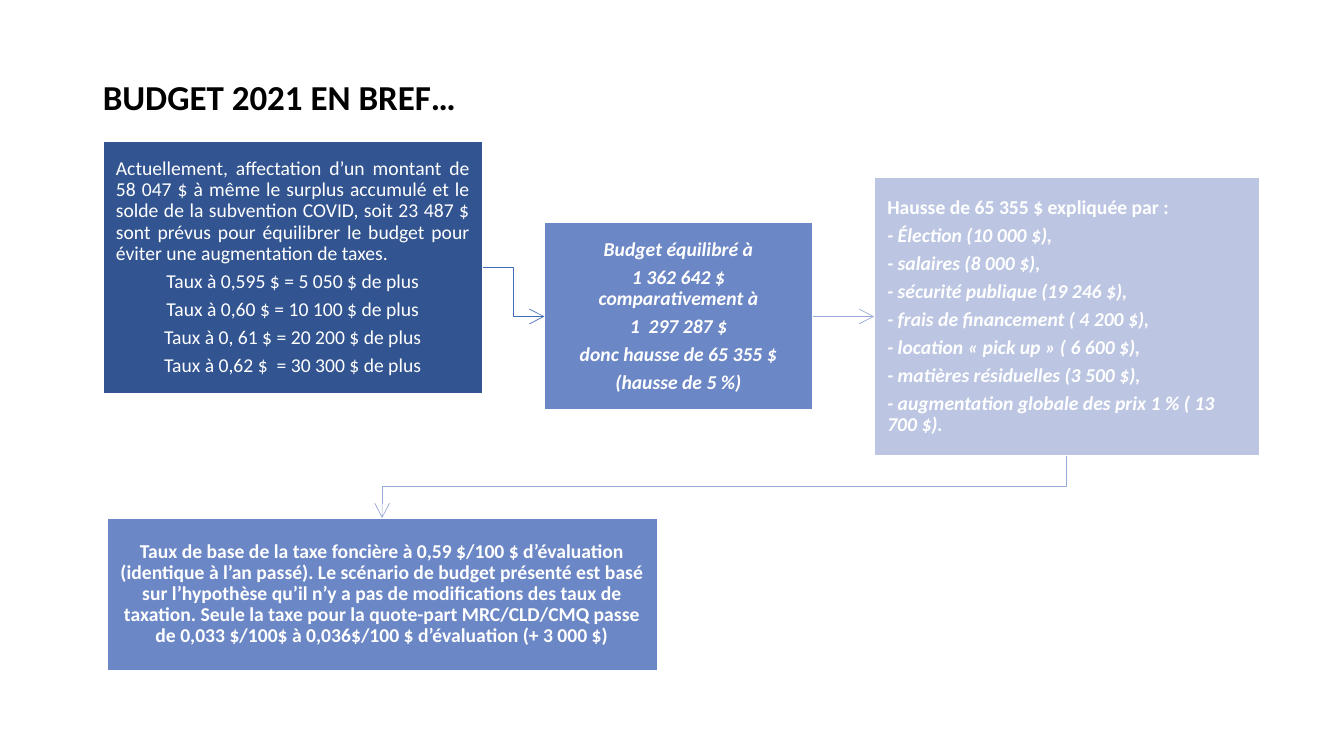
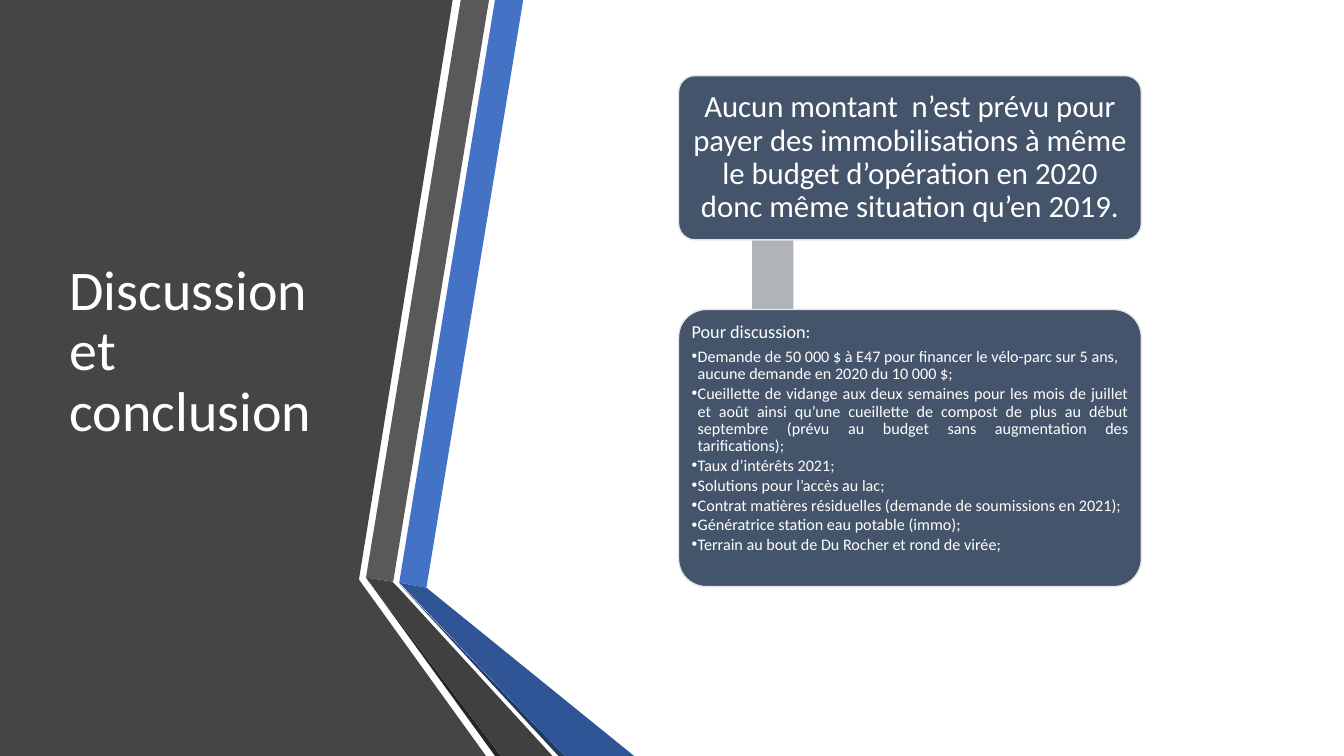
from dataclasses import dataclass

from lxml.etree import SubElement
from pptx import Presentation
from pptx.dml.color import RGBColor
from pptx.enum.shapes import MSO_CONNECTOR as Link, MSO_SHAPE as Preset
from pptx.enum.text import MSO_ANCHOR as Anchor, MSO_AUTO_SIZE as AutoSize, PP_ALIGN as Align
from pptx.oxml.ns import qn
from pptx.util import Inches, Pt

FONT = "Calibri"
COLORS = {
    "black": "000000", "white": "FFFFFF",
    "navy": "325491", "blue": "6C87C5", "pale": "BCC6E2",
    "first_arrow": "416DBB", "arrow": "97A9D5",
    "panel": "454545", "accent": "4472C4", "accent_dark": "2F5597", "accent_shade": "203864",
    "gray": "595959", "gray_dark": "404040", "gray_shade": "262626",
    "card": "44546A", "card_line": "E7E6E6", "bar": "B0B4B9",
}
BANDS = [
    ("panel", [(0, 0), (4.49, 0), (3.56, 5.75), (4.82, 7.5), (0, 7.5)]),
    ("accent", [(3.96, 5.78), (4.23, 5.83), (5.19, 0), (4.91, 0)]),
    ("gray", [(4.85, 0), (4.57, 0), (3.63, 5.73), (3.9, 5.77)]),
    ("gray_shade", [(3.63, 5.73), (4.91, 7.5), (4.97, 7.5)]),
    ("accent_shade", [(3.96, 5.79), (5.54, 7.5), (5.6, 7.5)]),
    ("accent_dark", [(3.96, 5.78), (5.6, 7.5), (6.29, 7.5), (4.23, 5.83)]),
    ("gray_dark", [(5.48, 7.5), (3.95, 5.83), (3.89, 5.77), (3.63, 5.73), (4.97, 7.5)]),
]
SURPLUS = [
    "Actuellement, affectation d’un montant de 58 047 $ à même le surplus accumulé et le solde "
    "de la subvention COVID, soit 23 487 $ sont prévus pour équilibrer le budget pour éviter "
    "une augmentation de taxes.",
    "Taux à 0,595 $ = 5 050 $ de plus",
    "Taux à 0,60 $ = 10 100 $ de plus",
    "Taux à 0, 61 $ = 20 200 $ de plus",
    "Taux à 0,62 $  = 30 300 $ de plus",
]
BALANCE = [
    "Budget équilibré à",
    "1 362 642 $ comparativement à",
    "1  297 287 $",
    "donc hausse de 65 355 $",
    "(hausse de 5 %)",
]
INCREASE = [
    "Hausse de 65 355 $ expliquée par :",
    "- Élection (10 000 $),",
    "- salaires (8 000 $),",
    "- sécurité publique (19 246 $),",
    "- frais de financement ( 4 200 $),",
    "- location « pick up » ( 6 600 $),",
    "- matières résiduelles (3 500 $),",
    "- augmentation globale des prix 1 % ( 13 700 $).",
]
TAX_RATE = [
    "Taux de base de la taxe foncière à 0,59 $/100 $ d’évaluation (identique à l’an passé). "
    "Le scénario de budget présenté est basé sur l’hypothèse qu’il n’y a pas de modifications "
    "des taux de taxation. Seule la taxe pour la quote-part MRC/CLD/CMQ passe de 0,033 $/100$ "
    "à 0,036$/100 $ d’évaluation (+ 3 000 $)",
]
CAPITAL = [
    "Aucun montant  n’est prévu pour payer des immobilisations à même le budget d’opération "
    "en 2020 donc même situation qu’en 2019.",
]
TOPICS = [
    "Pour discussion:",
    "Demande de 50 000 $ à E47 pour financer le vélo-parc sur 5 ans, aucune demande en 2020 "
    "du 10 000 $;",
    "Cueillette de vidange aux deux semaines pour les mois de juillet et août ainsi qu’une "
    "cueillette de compost de plus au début septembre (prévu au budget sans augmentation des "
    "tarifications);",
    "Taux d’intérêts 2021;",
    "Solutions pour l’accès au lac;",
    "Contrat matières résiduelles (demande de soumissions en 2021);",
    "Génératrice station eau potable (immo);",
    "Terrain au bout de Du Rocher et rond de virée;",
]


@dataclass
class Box:
    """A rectangle in inches."""
    left: float
    top: float
    width: float
    height: float

    def inner(self, left, top, width, height):
        """Return a box placed relative to this one."""
        return Box(self.left + left, self.top + top, width, height)

    def lengths(self):
        """Return the four measures as lengths."""
        return [Inches(value) for value in (self.left, self.top, self.width, self.height)]


def color(name):
    """Return the named colour."""
    return RGBColor.from_string(COLORS[name])


def set_values(target, values):
    """Set each attribute in values on the target."""
    for name, value in values.items():
        setattr(target, name, value)


def paint(shape, fill, line=None):
    """Give a shape a flat fill and an optional one-point line."""
    shape.shadow.inherit = False
    shape.fill.solid()
    shape.fill.fore_color.rgb = color(fill)
    if line:
        shape.line.color.rgb = color(line)
        shape.line.width = Pt(1)
    else:
        shape.line.fill.background()


def style_paragraph(paragraph, size, align=Align.CENTER, after=0.35, shade="white", **font):
    """Format a paragraph and its runs, with spacing as a share of the size."""
    set_values(paragraph, {"alignment": align, "line_spacing": 0.9,
                           "space_before": Pt(0), "space_after": Pt(round(size * after, 1))})
    for run in paragraph.runs:
        set_values(run.font, {"name": FONT, "size": Pt(size), **font})
        run.font.color.rgb = color(shade)


def write(shape, lines, size, margins, anchor=Anchor.MIDDLE, **style):
    """Fill a shape with paragraphs and return them."""
    frame = shape.text_frame
    side, edge = (Inches(margin) for margin in margins)
    set_values(frame, {"word_wrap": True, "auto_size": AutoSize.NONE, "vertical_anchor": anchor,
                       "margin_left": side, "margin_right": side,
                       "margin_top": edge, "margin_bottom": edge})
    frame.text = "\n".join(lines)
    for paragraph in frame.paragraphs:
        style_paragraph(paragraph, size, **style)
    return frame.paragraphs


def place(placeholder, box):
    """Move a placeholder to a box, in front of the other shapes."""
    set_values(placeholder, dict(zip(("left", "top", "width", "height"), box.lengths())))
    placeholder.element.getparent().append(placeholder.element)


def add_title(slide, box, text, size, shade, **font):
    """Place and format the slide title."""
    title = slide.shapes.title
    place(title, box)
    write(title, [text], size, (0.1, 0.05), align=Align.LEFT, after=0, shade=shade, **font)
    return title


def add_step(slide, box, fill, lines, **style):
    """Add a rectangular step of the budget flow."""
    step = slide.shapes.add_shape(Preset.RECTANGLE, *box.lengths())
    paint(step, fill, "white")
    return step, write(step, lines, 14, (0.13, 0.14), **style)


def style_arrow(connector, shade):
    """Make a connector a thin arrow without shadow."""
    connector.line.color.rgb = color(shade)
    connector.line.width = Pt(0.5)
    properties = connector.element.spPr
    SubElement(properties.find(qn("a:ln")), qn("a:tailEnd"), type="arrow", w="lg", len="lg")
    SubElement(properties, qn("a:effectLst"))


def join_steps(slide, kind, start, end, shade):
    """Join the right side of one step to the left side of the next."""
    connector = slide.shapes.add_connector(kind, 0, 0, 0, 0)
    connector.begin_connect(start, 3)
    connector.end_connect(end, 1)
    style_arrow(connector, shade)


def drop_arrow(slide, start, end, shade):
    """Draw a down, across and down arrow from one step to a lower one."""
    first_x, first_y = start.left + start.width // 2, start.top + start.height
    last_x, last_y = end.left + end.width // 2, end.top
    middle_x, middle_y = (first_x + last_x) // 2, (first_y + last_y) // 2
    half_width, half_height = (last_y - first_y) // 2, (first_x - last_x) // 2
    connector = slide.shapes.add_connector(
        Link.ELBOW, middle_x - half_width, middle_y - half_height,
        middle_x + half_width, middle_y + half_height)
    connector.element.spPr.find(qn("a:xfrm")).set("rot", "5400000")
    style_arrow(connector, shade)


def add_budget_flow(slide, area):
    """Draw the four budget steps and their arrows."""
    surplus, paragraphs = add_step(slide, area.inner(0, 0, 3.77, 2.51), "navy", SURPLUS)
    paragraphs[0].alignment = Align.JUSTIFY
    balance, paragraphs = add_step(slide, area.inner(4.38, 0.81, 2.66, 1.86), "blue", BALANCE,
                                   bold=True, italic=True)
    set_indent(paragraphs[0], 0, -0.36)
    increase, paragraphs = add_step(slide, area.inner(7.65, 0.36, 3.82, 2.76), "pale", INCREASE,
                                    align=Align.LEFT, bold=True, italic=True)
    paragraphs[0].runs[0].font.italic = False
    tax_rate, _ = add_step(slide, area.inner(0.04, 3.74, 5.46, 1.51), "blue", TAX_RATE, bold=True)
    join_steps(slide, Link.ELBOW, surplus, balance, "first_arrow")
    join_steps(slide, Link.STRAIGHT, balance, increase, "arrow")
    drop_arrow(slide, increase, tax_rate, "arrow")


def add_bands(slide, area):
    """Draw the dark side panel and its folded bands."""
    for fill, points in BANDS:
        corners = [(Inches(area.left + x), Inches(area.top + y)) for x, y in points]
        builder = slide.shapes.build_freeform(*corners[0])
        builder.add_line_segments(corners[1:], close=True)
        paint(builder.convert_to_shape(), fill)


def set_indent(paragraph, margin, indent, bullet=None):
    """Set the indents of a paragraph and its bullet."""
    properties = paragraph._p.get_or_add_pPr()
    properties.set("marL", str(Inches(margin)))
    properties.set("indent", str(Inches(indent)))
    if bullet:
        SubElement(properties, qn("a:buChar"), char=bullet)
    else:
        SubElement(properties, qn("a:buNone"))


def add_card(slide, box):
    """Add a rounded card."""
    card = slide.shapes.add_shape(Preset.ROUNDED_RECTANGLE, *box.lengths())
    card.adjustments[0] = 0.1
    paint(card, "card", "card_line")
    return card


def add_discussion(slide, area):
    """Draw the two linked cards with the topics to discuss."""
    bar = slide.shapes.add_shape(Preset.RECTANGLE, *area.inner(0.73, 1.63, 0.41, 0.69).lengths())
    paint(bar, "bar")
    capital = add_card(slide, area.inner(0, 0, area.width, 1.63))
    write(capital, CAPITAL, 22, (0.09, 0.09))
    add_card(slide, area.inner(0, 2.32, area.width, 2.75))
    body = slide.placeholders[1]
    place(body, area.inner(0.08, 2.4, area.width - 0.16, 2.59))
    heading, *topics = write(body, TOPICS, 11.5, (0.05, 0.05), Anchor.TOP,
                             align=Align.LEFT, after=0.15)
    style_paragraph(heading, 13, Align.LEFT)
    set_indent(heading, 0, 0)
    for topic in topics:
        topic.level = 1
        set_indent(topic, 0.06, -0.06, "•")
    topics[1].alignment = Align.JUSTIFY


def build_budget_slide(presentation):
    """Build the budget summary slide."""
    slide = presentation.slides.add_slide(presentation.slide_layouts[5])
    add_title(slide, Box(0.92, 0.4, 11.5, 1.16), "BUDGET 2021 EN BREF…", 25, "black", bold=True)
    add_budget_flow(slide, Box(1.02, 1.4, 11.47, 5.25))


def build_conclusion_slide(presentation):
    """Build the discussion and conclusion slide."""
    slide = presentation.slides.add_slide(presentation.slide_layouts[1])
    add_bands(slide, Box(0, 0, 6.29, 7.5))
    title = add_title(slide, Box(0.59, 0.75, 3.04, 5.5), "Discussion et conclusion", 40, "white")
    title.text_frame.margin_right = Inches(0.3)
    add_discussion(slide, Box(6.73, 0.75, 4.59, 5.07))


def main():
    """Build and save the presentation."""
    presentation = Presentation()
    set_values(presentation, {"slide_width": Inches(13.33), "slide_height": Inches(7.5)})
    build_budget_slide(presentation)
    build_conclusion_slide(presentation)
    presentation.save("out.pptx")


if __name__ == "__main__":
    main()
